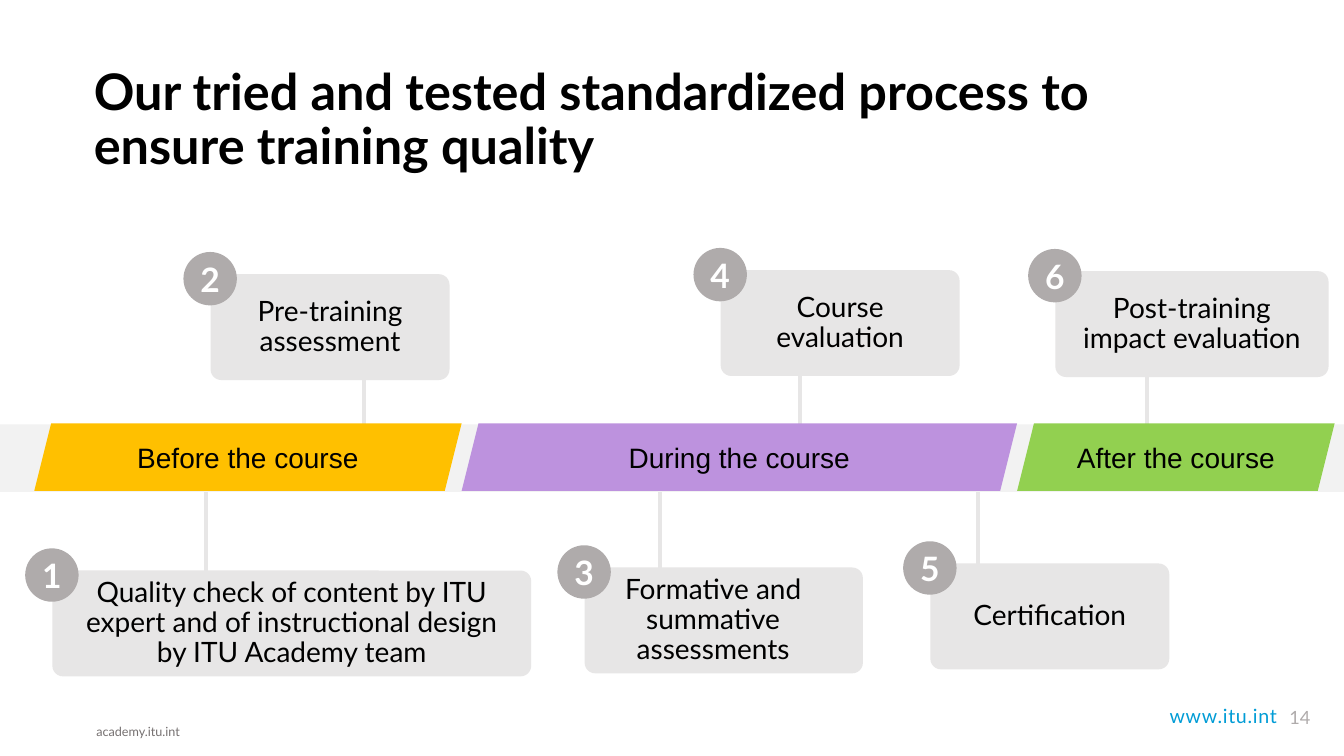
"""Build the slide on the six-step training quality process."""
import pptx
import pptx.dml.color
import pptx.enum.shapes
import pptx.enum.text
import pptx.util
from lxml import etree

TITLE = "Our tried and tested standardized process to ensure training quality"
HUES = {
    "black": "000000", "white": "FFFFFF", "band": "F2F2F2", "card": "E7E6E6",
    "badge": "AFABAB", "foot": "767171", "link": "009CD6",
    "gold": "FFC000", "plum": "BD92DE", "green": "92D050",
}
COLS, ROWS = 133.33, 75
BAND_TOP, BAND_HIGH = 42, 6.7
CARD_HIGH, BADGE, ROD = 10.5, 5.3, 10.6
EDGES = [3.4, 45.8, 100.9, 132.4]
PHASES = [("Before the course", "gold"), ("During the course", "plum"),
          ("After the course", "green")]
# ruff: noqa
STEPS = [
    {"text": "Quality check of content by ITU expert and of instructional design by ITU Academy team",
     "left": 5.2, "top": 56.6, "wide": 47.5, "rod": (20.4, 56.6), "pad": (1.4, 1.4)},
    {"text": "Pre-training assessment",
     "left": 20.9, "top": 27.2, "wide": 23.7, "rod": (36.1, 36), "pad": (1, 1)},
    {"text": "Formative and summative assessments",
     "left": 58, "top": 56.3, "wide": 27.6, "rod": (65.5, 57.4), "pad": (1, 3.1)},
    {"text": "Course evaluation",
     "left": 71.5, "top": 26.8, "wide": 23.7, "rod": (79.4, 33.7), "pad": (1, 1)},
    {"text": "Certification",
     "left": 92.3, "top": 55.9, "wide": 23.7, "rod": (97, 56.7), "pad": (1, 1)},
    {"text": "Post-training impact evaluation",
     "left": 104.7, "top": 26.9, "wide": 27.1, "rod": (113.8, 33.9), "pad": (1, 1)},
]

KIND = pptx.enum.shapes.MSO_SHAPE
ALIGN = pptx.enum.text.PP_ALIGN
ANCHOR = pptx.enum.text.MSO_ANCHOR

deck = pptx.Presentation()
deck.slide_width = pptx.util.Inches(13.33)
deck.slide_height = pptx.util.Inches(7.5)
slide = deck.slides.add_slide(deck.slide_layouts[5])


def across(cols):
    return round(deck.slide_width * cols / COLS)


def down(rows):
    return round(deck.slide_height * rows / ROWS)


def place(left, top, wide, high):
    return across(left), down(top), across(wide), down(high)


def tint(name):
    return pptx.dml.color.RGBColor.from_string(HUES[name])


def write(shape, text, size=20, face="Lato", hue="black", bold=False,
          align=ALIGN.CENTER, anchor=ANCHOR.MIDDLE, space=1.0,
          pad=(1, 1), rise=0.5, wrap=True, track=0):
    frame = shape.text_frame
    frame.auto_size = pptx.enum.text.MSO_AUTO_SIZE.NONE
    frame.word_wrap = wrap
    frame.vertical_anchor = anchor
    frame.margin_left, frame.margin_right = map(across, pad)
    frame.margin_top = frame.margin_bottom = down(rise)
    para = frame.paragraphs[0]
    para.alignment, para.line_spacing = align, space
    run = para.add_run()
    run.text = text
    font = run.font
    font.name, font.size, font.bold = face, pptx.util.Pt(size), bold
    font.color.rgb = tint(hue)
    if track:
        run._r.get_or_add_rPr().set("spc", str(track))


def draw(kind, box, hue):
    shape = slide.shapes.add_shape(kind, *place(*box))
    shape.shadow.inherit = False
    shape.fill.solid()
    shape.fill.fore_color.rgb = tint(hue)
    shape.line.fill.background()
    return shape


def link(x, start, end):
    rod = slide.shapes.add_connector(
        pptx.enum.shapes.MSO_CONNECTOR.STRAIGHT,
        across(x), down(start), across(x), down(end))
    rod.line.color.rgb = tint("card")
    rod.line.width = pptx.util.Pt(3)
    etree.SubElement(rod._element.spPr, pptx.oxml.ns.qn("a:effectLst"))


def note(box, text, **form):
    write(slide.shapes.add_textbox(*place(*box)), text, **form)


head = slide.shapes.title
head.left, head.top, head.width, head.height = place(8.3, 6.1, 116.7, 7)
write(head, TITLE, size=36, bold=True, align=ALIGN.LEFT, anchor=ANCHOR.TOP, space=0.9)

for step in STEPS:
    x, y = step["rod"]
    link(x, y, y + ROD if y < BAND_TOP else y - ROD)

draw(KIND.RECTANGLE, (0, BAND_TOP + 0.1, COLS, BAND_HIGH), "band")
for (text, hue), left, right in zip(PHASES, EDGES, EDGES[1:]):
    phase = draw(KIND.PARALLELOGRAM, (left, BAND_TOP, right - left, BAND_HIGH), hue)
    write(phase, text, face="Arial")

for count, step in enumerate(STEPS, 1):
    left, top = step["left"], step["top"]
    card = draw(KIND.ROUNDED_RECTANGLE, (left, top, step["wide"], CARD_HIGH), "card")
    card.adjustments[0] = 0.1
    write(card, step["text"], space=0.9, pad=step["pad"])
    badge = draw(KIND.OVAL, (left - 2.7, top - 2.2, BADGE, BADGE), "badge")
    write(badge, str(count), size=24, hue="white", bold=True, pad=(0, 0), rise=0)

note((8, 71.2, 11.4, 2.8), "academy.itu.int", size=9, hue="foot", wrap=False)
note((100.4, 69.3, 27.3, 3.4), "www.itu.int", size=14, hue="link",
     align=ALIGN.RIGHT, anchor=ANCHOR.TOP, track=50)
note((124.9, 69.6, 6.1, 3.2), "14", size=13, hue="badge",
     align=ALIGN.RIGHT, anchor=ANCHOR.TOP)

deck.save("out.pptx")
